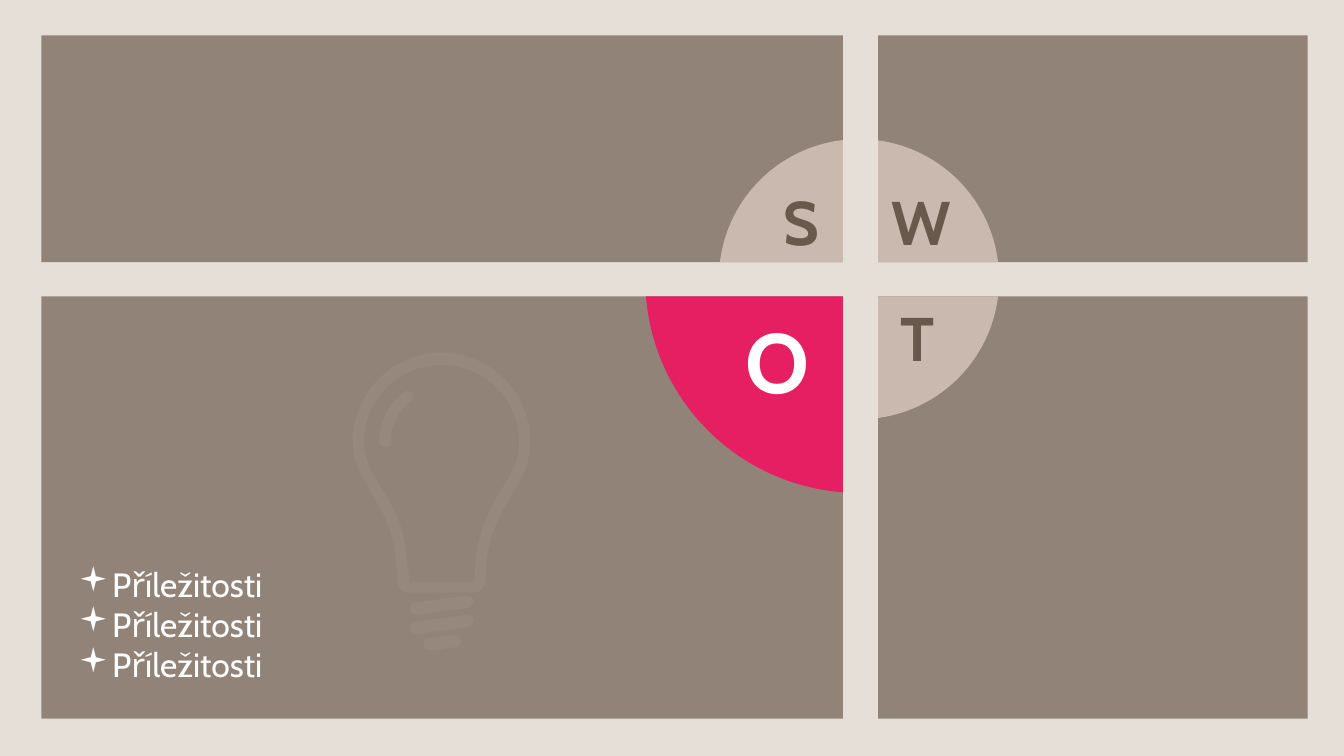
import math
from dataclasses import dataclass

import pptx
import pptx.dml.color
import pptx.enum.shapes
import pptx.enum.text
import pptx.oxml.ns
import pptx.util
from lxml import etree

Inches = pptx.util.Inches
qn = pptx.oxml.ns.qn
ALIGN = pptx.enum.text.PP_ALIGN
ANCHOR = pptx.enum.text.MSO_ANCHOR
Segments = list[tuple[float, ...]]

COLORS = {
    "background": "E6DFD8",
    "card": "928378",
    "sector": "C9B9AF",
    "accent": "E61F63",
    "letter": "69594D",
    "white": "FFFFFF",
}
FONT = "Cabin"
BULLET_FONT = "Wingdings"
CENTER_X, CENTER_Y = 8.52, 2.77


@dataclass
class Quadrant:
    letter: str
    card: tuple[float, float, float, float]
    side_x: int
    side_y: int
    box: tuple[float, float, float, float]
    radius: float = 1.39
    fill: str = "sector"
    color: str = "letter"
    size: int = 44


@dataclass
class Thread:
    left: float
    left_top: float
    right: float
    right_top: float


QUADRANTS = [
    Quadrant("T", (8.71, 2.94, 4.26, 4.19), 1, 1, (8.93, 2.97, 0.35, 0.74)),
    Quadrant("O", (0.41, 2.94, 7.95, 4.19), -1, 1, (7.39, 3.07, 0.62, 1.01),
             2.12, "accent", "white", 60),
    Quadrant("S", (0.41, 0.35, 7.95, 2.25), -1, -1, (7.77, 1.82, 0.36, 0.74)),
    Quadrant("W", (8.71, 0.35, 4.26, 2.25), 1, -1, (8.84, 1.82, 0.56, 0.74)),
]
THREADS = [
    Thread(4.12, 5.98, 4.63, 5.91),
    Thread(4.12, 6.17, 4.63, 6.1),
    Thread(4.25, 6.33, 4.51, 6.3),
]
BULB_OUTER = [
    (4.38, 3.5),
    (3.89, 3.5, 3.5, 3.9, 3.5, 4.38),
    (3.5, 4.59, 3.59, 4.74, 3.69, 4.9),
    (3.77, 5.04, 3.86, 5.18, 3.9, 5.38),
    (3.92, 5.46, 3.94, 5.7, 3.94, 5.73),
    (3.94, 5.82, 3.99, 5.88, 4.06, 5.88),
    (4.7, 5.88),
    (4.77, 5.88, 4.82, 5.82, 4.82, 5.73),
    (4.82, 5.34, 4.95, 5.12, 5.07, 4.92),
    (5.17, 4.76, 5.26, 4.6, 5.26, 4.38),
    (5.26, 3.9, 4.87, 3.5, 4.38, 3.5),
]
BULB_INNER = [
    (4.97, 4.86),
    (4.85, 5.07, 4.71, 5.31, 4.71, 5.73),
    (4.71, 5.75, 4.7, 5.76, 4.7, 5.77),
    (4.06, 5.77),
    (4.06, 5.76, 4.06, 5.75, 4.06, 5.72),
    (4.05, 5.71, 4.03, 5.45, 4.01, 5.36),
    (3.97, 5.14, 3.87, 4.98, 3.78, 4.84),
    (3.69, 4.69, 3.61, 4.56, 3.61, 4.38),
    (3.61, 3.96, 3.96, 3.62, 4.38, 3.62),
    (4.8, 3.62, 5.15, 3.96, 5.15, 4.38),
    (5.15, 4.57, 5.07, 4.71, 4.97, 4.86),
]
SHINE = [
    (4.01, 3.89),
    (3.89, 3.98, 3.81, 4.1, 3.78, 4.23),
    (3.77, 4.28, 3.76, 4.33, 3.76, 4.38),
    (3.76, 4.42, 3.79, 4.44, 3.82, 4.44),
    (3.85, 4.44, 3.88, 4.42, 3.88, 4.38),
    (3.88, 4.34, 3.88, 4.3, 3.89, 4.26),
    (3.92, 4.15, 3.98, 4.05, 4.08, 3.98),
    (4.1, 3.96, 4.11, 3.93, 4.09, 3.9),
    (4.07, 3.88, 4.03, 3.87, 4.01, 3.89),
]


def rgb(name: str) -> pptx.dml.color.RGBColor:
    return pptx.dml.color.RGBColor.from_string(COLORS[name])


def paint(sp, color: str, opacity: int = 100) -> None:
    sp.shadow.inherit = False
    sp.fill.solid()
    sp.fill.fore_color.rgb = rgb(color)
    sp.line.fill.background()
    if opacity < 100:
        clr = sp._element.spPr.find(qn("a:solidFill")).find(qn("a:srgbClr"))
        etree.SubElement(clr, qn("a:alpha"), val=str(opacity * 1000))


def capsule(thread: Thread) -> Segments:
    x, y, u, v = thread.left, thread.left_top, thread.right, thread.right_top
    return [
        (u, v),
        (x, y),
        (x - 0.04, y + 0.01, x - 0.06, y + 0.03, x - 0.05, y + 0.07),
        (x - 0.05, y + 0.09, x - 0.03, y + 0.12, x + 0.01, y + 0.12),
        (u + 0.02, v + 0.12),
        (u + 0.05, v + 0.11, u + 0.07, v + 0.08, u + 0.07, v + 0.05),
        (u + 0.06, v + 0.02, u + 0.03, v, u, v),
    ]


def sector(quad: Quadrant) -> Segments:
    left, top, width, height = quad.card
    x = left if quad.side_x > 0 else left + width
    y = top if quad.side_y > 0 else top + height
    dx, dy = x - CENTER_X, y - CENTER_Y
    rim_y = quad.side_y * math.sqrt(quad.radius**2 - dx**2)
    rim_x = quad.side_x * math.sqrt(quad.radius**2 - dy**2)
    sweep = math.atan2(dy, rim_x) - math.atan2(rim_y, dx)
    k = 4 / 3 * math.tan(sweep / 4)
    x1, y1 = x, CENTER_Y + rim_y
    x2, y2 = CENTER_X + rim_x, y
    return [(x, y), (x1, y1), (x1 - k * rim_y, y1 + k * dx, x2 + k * dy, y2 - k * rim_x, x2, y2)]


def add_outline(shapes, contours: list[Segments], color: str, opacity: int = 100) -> None:
    builder = None
    for contour in contours:
        numbers = [Inches(n) for segment in contour for n in segment]
        points = list(zip(numbers[::2], numbers[1::2]))
        if builder is None:
            builder = shapes.build_freeform(*points[0])
        else:
            builder.move_to(*points[0])
        builder.add_line_segments(points[1:], close=True)
    sp = builder.convert_to_shape()
    steps = iter(list(sp._element.iter(qn("a:lnTo"))))
    for segment in [segment for contour in contours for segment in contour[1:]]:
        step = next(steps)
        if len(segment) == 6:
            step.tag = qn("a:cubicBezTo")
            for _ in range(2):
                extra = next(steps)
                step.append(extra[0])
                extra.getparent().remove(extra)
    paint(sp, color, opacity)


def add_text(shapes, lines: list[str], box: tuple[float, float, float, float], *,
             size: int, color: str, bold: bool = False, align=ALIGN.LEFT,
             anchor=ANCHOR.MIDDLE, wrap: bool = False, inset: tuple[float, float] = (0, 0),
             bullet: str = "") -> None:
    tf = shapes.add_textbox(*map(Inches, box)).text_frame
    tf.word_wrap = wrap
    tf.auto_size = pptx.enum.text.MSO_AUTO_SIZE.SHAPE_TO_FIT_TEXT
    tf.vertical_anchor = anchor
    tf.margin_left = tf.margin_right = Inches(inset[0])
    tf.margin_top = tf.margin_bottom = Inches(inset[1])
    for i, line in enumerate(lines):
        p = tf.add_paragraph() if i else tf.paragraphs[0]
        p.alignment = align
        if bullet:
            pPr = p._p.get_or_add_pPr()
            pPr.set("marL", str(Inches(0.29)))
            pPr.set("indent", str(-Inches(0.29)))
            etree.SubElement(pPr, qn("a:buFont"), typeface=BULLET_FONT)
            etree.SubElement(pPr, qn("a:buChar"), char=bullet)
        r = p.add_run()
        r.text = line
        r.font.name, r.font.size, r.font.bold = FONT, pptx.util.Pt(size), bold
        r.font.color.rgb = rgb(color)


def main() -> None:
    prs = pptx.Presentation()
    prs.slide_width, prs.slide_height = Inches(13.33), Inches(7.5)
    s = prs.slides.add_slide(prs.slide_layouts[6])
    s.background.fill.solid()
    s.background.fill.fore_color.rgb = rgb("background")
    for quad in QUADRANTS:
        sp = s.shapes.add_shape(pptx.enum.shapes.MSO_SHAPE.RECTANGLE, *map(Inches, quad.card))
        paint(sp, "card")
    for quad in QUADRANTS:
        add_outline(s.shapes, [sector(quad)], quad.fill)
    add_text(s.shapes, ["Příležitosti"] * 3, (0.68, 5.53, 4.11, 1.31), size=24, color="white",
             anchor=ANCHOR.BOTTOM, wrap=True, inset=(0.1, 0.05), bullet="▪")
    for quad in QUADRANTS:
        add_text(s.shapes, [quad.letter], quad.box, size=quad.size, color=quad.color,
                 bold=True, align=ALIGN.CENTER)
    bulb = s.shapes.add_group_shape().shapes
    for contours in [[BULB_OUTER, BULB_INNER], [SHINE]] + [[capsule(t)] for t in THREADS]:
        add_outline(bulb, contours, "sector", opacity=10)
    prs.save("out.pptx")


if __name__ == "__main__":
    main()
